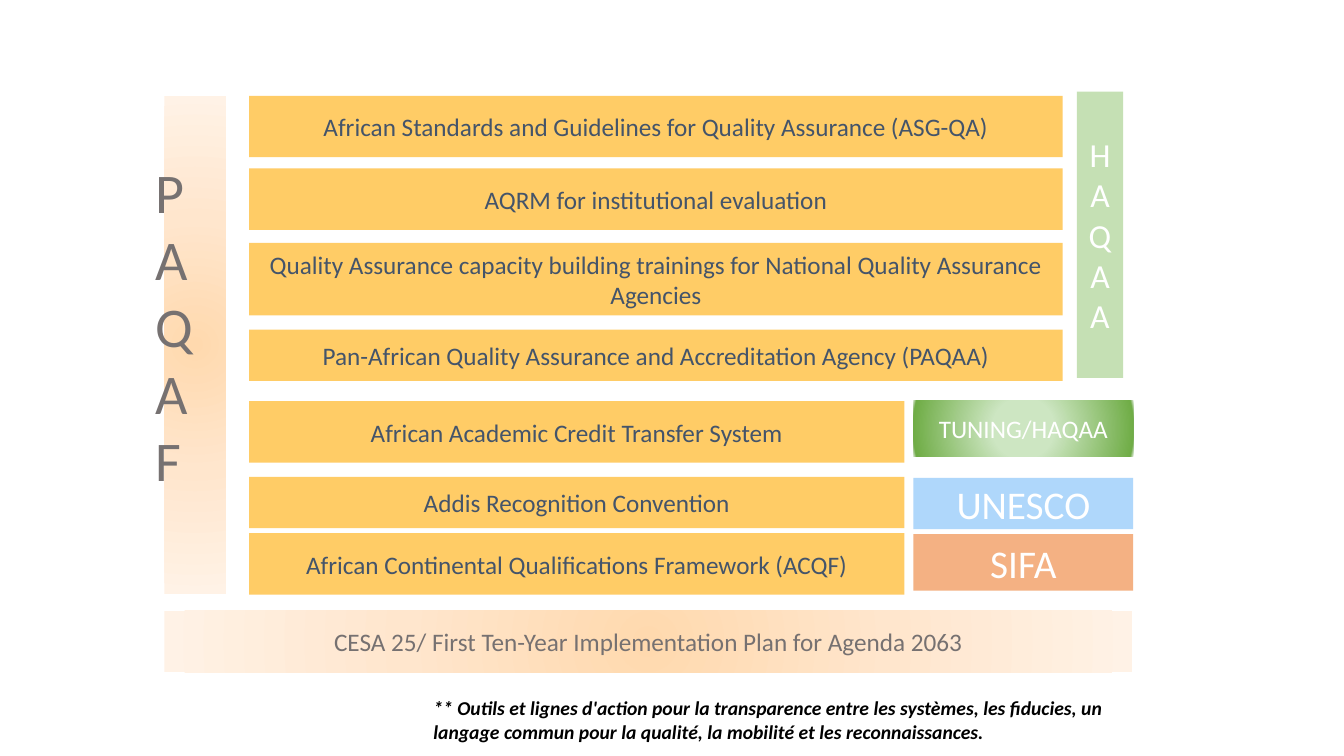
from lxml.etree import SubElement
from pptx import Presentation
from pptx.dml.color import RGBColor
from pptx.enum.shapes import MSO_SHAPE
from pptx.enum.text import MSO_ANCHOR, MSO_AUTO_SIZE, PP_ALIGN
from pptx.oxml.ns import qn
from pptx.util import Inches, Pt

AMBER = RGBColor(0xFF, 0xCC, 0x66)
SLATE = RGBColor(0x44, 0x54, 0x6A)
GREY = RGBColor(0x76, 0x71, 0x71)
WHITE = RGBColor(0xFF, 0xFF, 0xFF)
BLACK = RGBColor(0x00, 0x00, 0x00)
PALE_GREEN = RGBColor(0xC5, 0xE0, 0xB4)
SKY = RGBColor(0xAF, 0xD7, 0xFB)
ORANGE = RGBColor(0xF4, 0xB1, 0x83)
# Radial gradients: (position in percent, colour), from the centre outwards
PEACH_GLOW = [(0, RGBColor(0xFF, 0xD9, 0xAE)), (50, RGBColor(0xFF, 0xE6, 0xCD)),
              (100, RGBColor(0xFF, 0xF2, 0xE6))]
GREEN_GLOW = [(27, RGBColor(0xCD, 0xE6, 0xC2)), (97, RGBColor(0x70, 0xAD, 0x47)),
              (100, RGBColor(0xE6, 0xF2, 0xE1))]

# Columns and row heights of the framework, in inches
PILLAR_LEFT, TOOL_LEFT, PARTNER_LEFT = 1.63, 2.47, 9.06
WIDE, NARROW, PARTNER_WIDTH = 8.07, 6.5, 2.18
TALL, LOW = 0.61, 0.51

prs = Presentation()
prs.slide_width, prs.slide_height = Inches(13.33), Inches(7.5)
slide = prs.slides.add_slide(prs.slide_layouts[6])


def write(frame, text, size, colour):
    frame.word_wrap = True
    frame.text = text
    font = frame.paragraphs[0].runs[0].font
    font.name, font.size, font.color.rgb = "Calibri", Pt(size), colour
    return font


def add_block(left, top, width, height, fill, text="", size=18, colour=WHITE):
    block = slide.shapes.add_shape(MSO_SHAPE.RECTANGLE, *map(Inches, (left, top, width, height)))
    block.shadow.inherit = False
    block.line.fill.background()
    if isinstance(fill, RGBColor):
        block.fill.solid()
        block.fill.fore_color.rgb = fill
    else:
        block.fill.gradient()
        gradient = block.fill._fill._gradFill
        for child in list(gradient):
            gradient.remove(child)
        stops = SubElement(gradient, qn("a:gsLst"))
        for position, stop_colour in fill:
            stop = SubElement(stops, qn("a:gs"), pos=str(position * 1000))
            SubElement(stop, qn("a:srgbClr"), val=str(stop_colour))
        circle = SubElement(gradient, qn("a:path"), {"path": "circle"})
        SubElement(circle, qn("a:fillToRect"), dict.fromkeys("ltrb", "50000"))
    if text:
        write(block.text_frame, text, size, colour)
        block.text_frame.vertical_anchor = MSO_ANCHOR.MIDDLE
        block.text_frame.paragraphs[0].alignment = PP_ALIGN.CENTER


# PAQAF pillar with stacked letters
add_block(PILLAR_LEFT, 0.95, 0.61, 4.94, PEACH_GLOW)
paqaf = slide.shapes.add_textbox(Inches(1.44), Inches(1.51), Inches(1), Inches(4.37)).text_frame
write(paqaf, "PAQAF", 40, GREY)
paqaf.auto_size = MSO_AUTO_SIZE.SHAPE_TO_FIT_TEXT
paqaf._txBody.bodyPr.set("vert", "wordArtVert")

# Tools of the framework
for top, width, height, tool in [
    (0.95, WIDE, TALL, "African Standards and Guidelines for Quality Assurance (ASG-QA)"),
    (1.67, WIDE, TALL, "AQRM for institutional evaluation"),
    (2.41, WIDE, 0.72, "Quality Assurance capacity building trainings for National Quality Assurance Agencies"),
    (3.27, WIDE, LOW, "Pan-African Quality Assurance and Accreditation Agency (PAQAA)"),
    (3.98, NARROW, TALL, "African Academic Credit Transfer System"),
    (4.73, NARROW, LOW, "Addis Recognition Convention"),
    (5.29, NARROW, TALL, "African Continental Qualifications Framework (ACQF)"),
]:
    add_block(TOOL_LEFT, top, width, height, AMBER, tool, colour=SLATE)

# Partners beside the tools
add_block(10.68, 0.91, 0.46, 2.84, PALE_GREEN, "HAQAA", 24)
for top, height, fill, partner, size in [
    (3.97, 0.56, GREEN_GLOW, "TUNING/HAQAA", 18),
    (4.74, LOW, SKY, "UNESCO", 28),
    (5.3, 0.56, ORANGE, "SIFA", 28),
]:
    add_block(PARTNER_LEFT, top, PARTNER_WIDTH, height, fill, partner, size)

# Base plan
add_block(PILLAR_LEFT, 6.06, 9.6, TALL, PEACH_GLOW,
          "CESA 25/ First Ten-Year Implementation Plan for Agenda 2063", colour=GREY)

# Footnote
footnote = slide.shapes.add_textbox(Inches(4.2), Inches(6.86), Inches(7.25), Inches(0.57)).text_frame
footnote_font = write(
    footnote,
    "** Outils et lignes d'action pour la transparence entre les systèmes, les fiducies, un "
    "langage commun pour la qualité, la mobilité et les reconnaissances.", 14, BLACK)
footnote_font.bold = footnote_font.italic = True
footnote.auto_size = MSO_AUTO_SIZE.SHAPE_TO_FIT_TEXT

prs.save("out.pptx")
